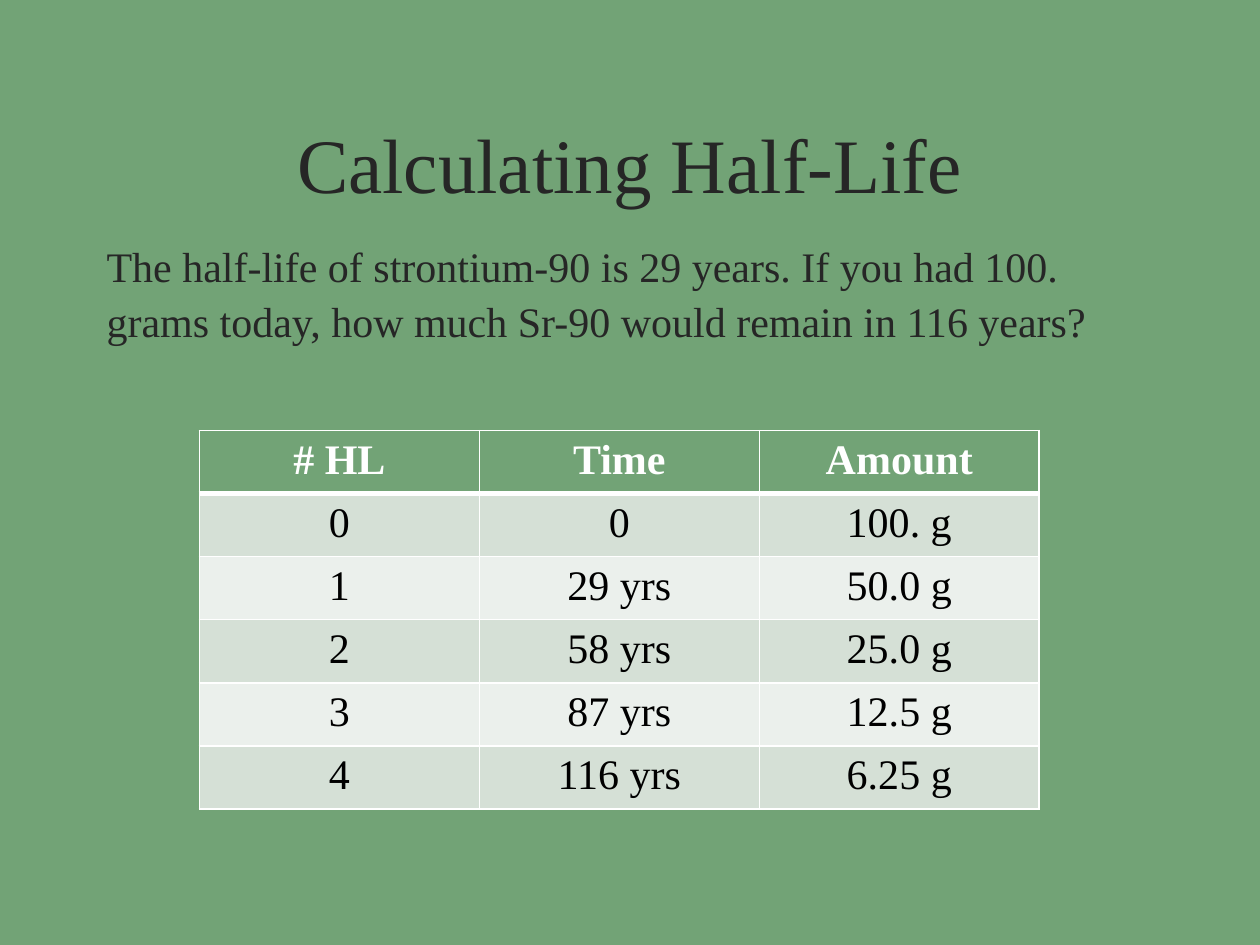
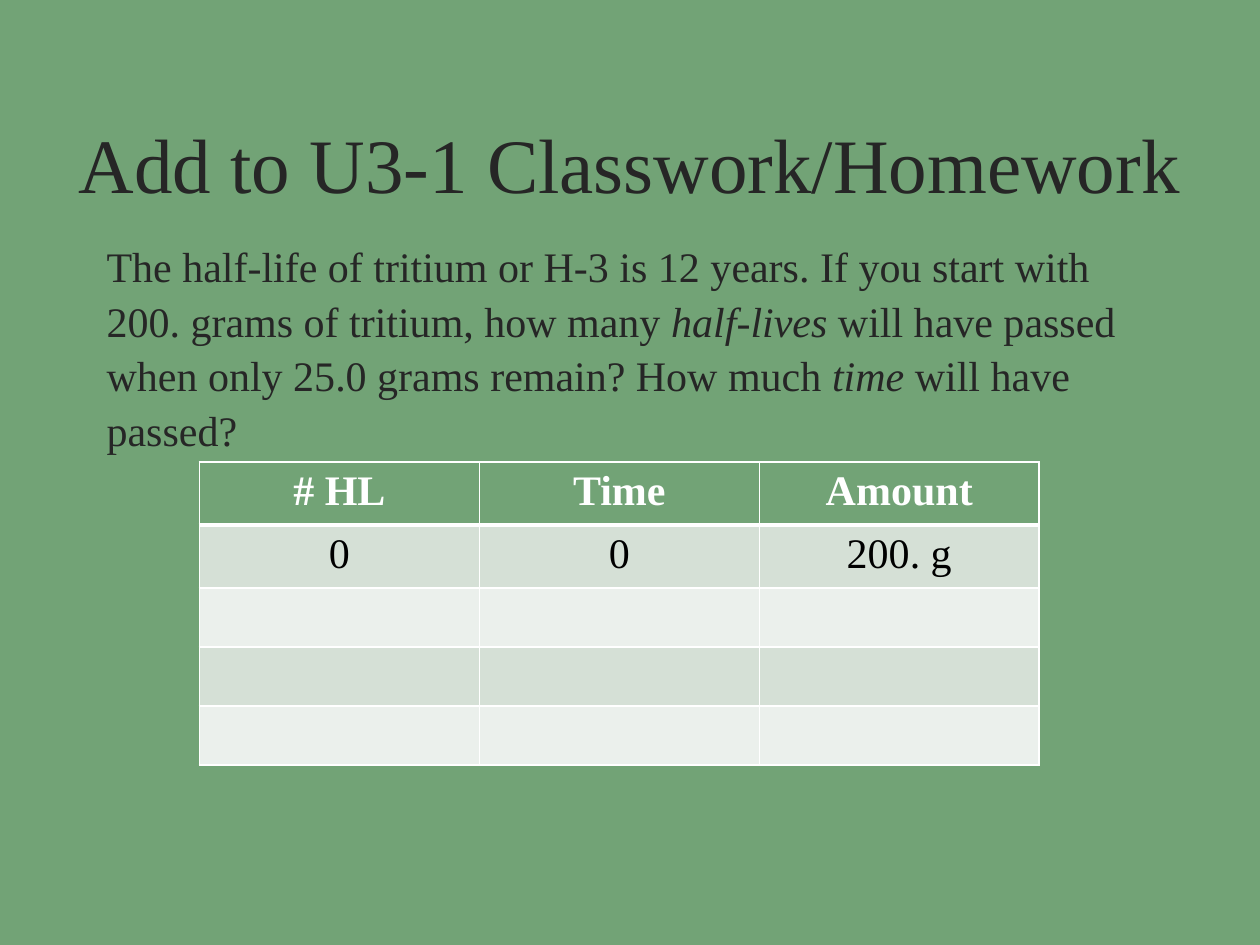
from dataclasses import dataclass

from lxml import etree
from pptx import Presentation
from pptx.dml.color import RGBColor
from pptx.enum.text import MSO_ANCHOR, PP_ALIGN
from pptx.oxml.ns import qn
from pptx.util import Cm, Pt

LEFT, CENTER = PP_ALIGN.LEFT, PP_ALIGN.CENTER
TOP, MIDDLE = MSO_ANCHOR.TOP, MSO_ANCHOR.MIDDLE


@dataclass(frozen=True)
class Theme:
    font: str = "Times New Roman"
    green: str = "72A376"
    ink: str = "262626"
    black: str = "000000"
    white: str = "FFFFFF"
    bands: tuple = ("D5E0D6", "EBF0EC")
    title_size: int = 44
    text_size: int = 24
    rule: int = 1
    header_rule: int = 3


THEME = Theme()
HEADER = ("# HL", "Time", "Amount")
ROW_HEIGHT = 1.19


def write(tf, text, size=THEME.text_size, color=THEME.ink, bold=False,
          align=LEFT, anchor=TOP, before=0, spacing=None):
    """Text between asterisks is set in italics."""
    tf.word_wrap = True
    tf.vertical_anchor = anchor
    p = tf.paragraphs[0]
    p.alignment = align
    p.space_before = Pt(before)
    p.line_spacing = spacing
    for i, part in enumerate(text.split("*")):
        r = p.add_run()
        r.text = part
        r.font.name = THEME.font
        r.font.size = Pt(size)
        r.font.bold = bold
        r.font.italic = i % 2 == 1
        r.font.color.rgb = RGBColor.from_string(color)


def add_text(s, box, text, **fmt):
    sp = s.shapes.add_textbox(*(Cm(v) for v in box))
    write(sp.text_frame, text, **fmt)


def set_borders(cell, **widths):
    tc_pr = cell._tc.get_or_add_tcPr()
    for side in "LRTB":
        width = widths.get(side, THEME.rule)
        ln = etree.SubElement(tc_pr, qn(f"a:ln{side}"), w=str(Pt(width)))
        fill = etree.SubElement(ln, qn("a:solidFill"))
        etree.SubElement(fill, qn("a:srgbClr"), val=THEME.white)


def add_decay_table(s, box, rows):
    left, top, width = box
    data = [HEADER, *rows]
    tbl = s.shapes.add_table(len(data), len(HEADER), Cm(left), Cm(top),
                             Cm(width), Cm(ROW_HEIGHT * len(data))).table
    for i, values in enumerate(data):
        tbl.rows[i].height = Cm(ROW_HEIGHT)
        if i == 0:
            fill, color = THEME.green, THEME.white
            borders = {"B": THEME.header_rule}
        else:
            fill, color = THEME.bands[(i - 1) % 2], THEME.black
            borders = {"T": THEME.header_rule} if i == 1 else {}
        for cell, value in zip(tbl.rows[i].cells, values):
            set_borders(cell, **borders)
            cell.fill.solid()
            cell.fill.fore_color.rgb = RGBColor.from_string(fill)
            if value:
                write(cell.text_frame, value, color=color, bold=i == 0,
                      align=CENTER)


def add_problem_slide(prs, title, question, rows, title_margin, table_top):
    s = prs.slides.add_slide(prs.slide_layouts[6])
    s.background.fill.solid()
    s.background.fill.fore_color.rgb = RGBColor.from_string(THEME.green)
    title_width = prs.slide_width.cm - 2 * title_margin
    add_text(s, (title_margin, 1.7, title_width, 3.18), title,
             size=THEME.title_size, align=CENTER, anchor=MIDDLE)
    add_text(s, (1.9, 4.65, 21.6, 11.43), question, before=4.8, spacing=1.08)
    add_decay_table(s, (4.02, table_top, 16.93), rows)


def main():
    prs = Presentation()
    prs.slide_width, prs.slide_height = Cm(25.4), Cm(19.05)
    add_problem_slide(
        prs, "Calculating Half-Life",
        "The half-life of strontium-90 is 29 years. If you had 100. grams "
        "today, how much Sr-90 would remain in 116 years?",
        [("0", "0", "100. g"), ("1", "29 yrs", "50.0 g"),
         ("2", "58 yrs", "25.0 g"), ("3", "87 yrs", "12.5 g"),
         ("4", "116 yrs", "6.25 g")],
        title_margin=1.9, table_top=8.68)
    add_problem_slide(
        prs, "Add to U3-1 Classwork/Homework",
        "The half-life of tritium or H-3 is 12 years. If you start with 200. "
        "grams of tritium, how many *half-lives* will have passed when only "
        "25.0 grams remain? How much *time* will have passed?",
        [("0", "0", "200. g")] + [("", "", "")] * 3,
        title_margin=1.06, table_top=9.31)
    prs.save("out.pptx")


if __name__ == "__main__":
    main()
